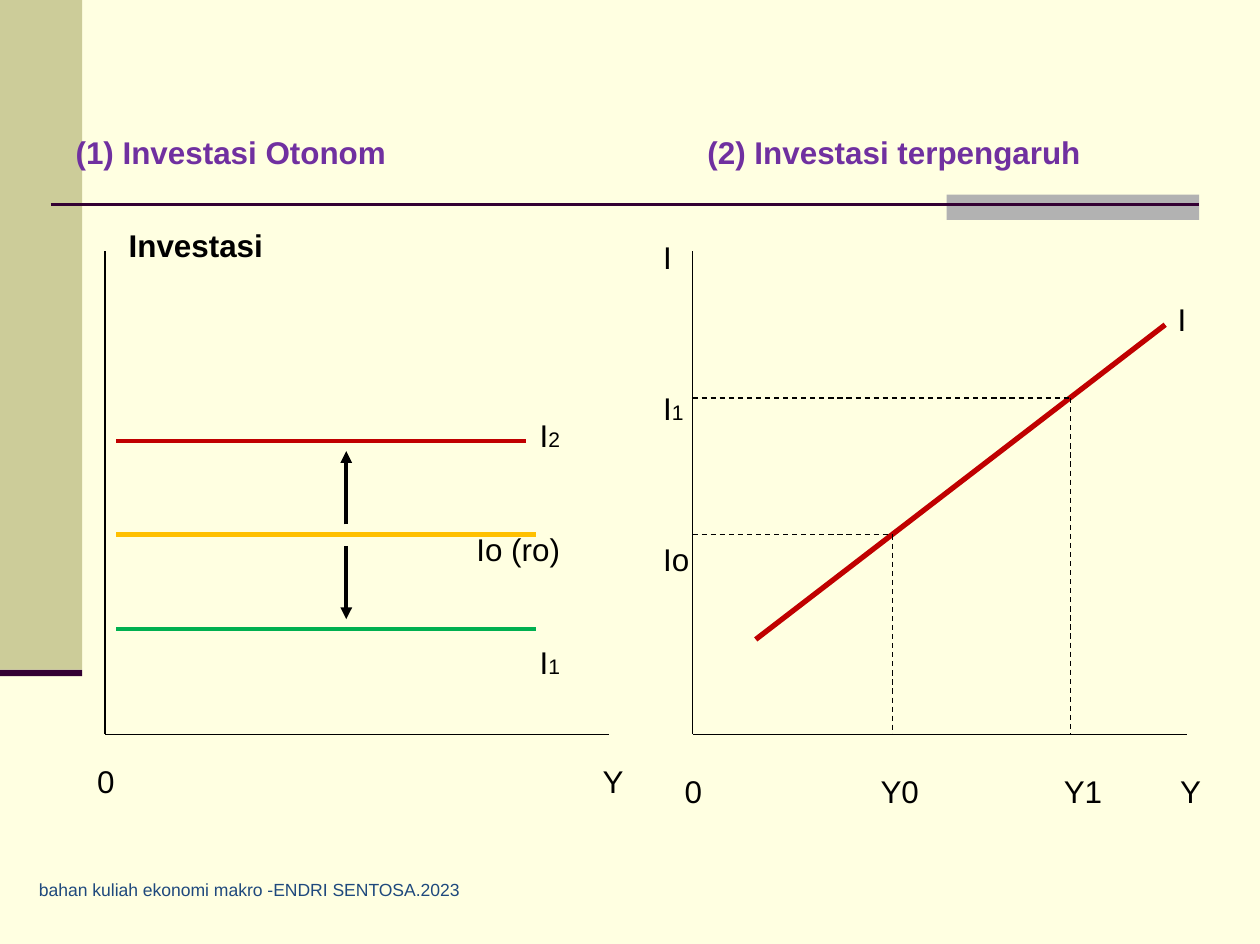
from lxml import etree
from pptx import Presentation
from pptx.dml.color import RGBColor
from pptx.enum import dml, shapes, text
from pptx.oxml import ns
from pptx.util import Inches, Pt

COLORS = {
    "cream": "FFFFE1", "olive": "CCCC99", "gray": "B2B2B2", "plum": "330033",
    "black": "000000", "amber": "FFC000", "red": "C00000", "green": "00B050",
    "purple": "7030A0", "navy": "1F497D",
}


def rgb(name):
    return RGBColor.from_string(COLORS[name])


class Canvas:
    font = "Arial"
    size = 17.9
    small = 12

    def __init__(self, slide):
        self.slide = slide
        background = slide.background.fill
        background.solid()
        background.fore_color.rgb = rgb("cream")

    def block(self, left, top, width, height, color):
        block = self.slide.shapes.add_shape(
            shapes.MSO_SHAPE.RECTANGLE, *map(Inches, (left, top, width, height)))
        block.shadow.inherit = False
        block.fill.solid()
        block.fill.fore_color.rgb = rgb(color)
        block.line.fill.background()

    def line(self, start, end, color="black", width=0.75, dashed=False, arrow=False):
        line = self.slide.shapes.add_connector(
            shapes.MSO_CONNECTOR.STRAIGHT, *map(Inches, (*start, *end)))
        line.line.color.rgb = rgb(color)
        line.line.width = Pt(width)
        if dashed:
            line.line.dash_style = dml.MSO_LINE.DASH
        if arrow:
            etree.SubElement(line.line._get_or_add_ln(), ns.qn("a:tailEnd"), type="triangle")
        etree.SubElement(line._element.spPr, ns.qn("a:effectLst"))

    def label(self, words, left, top, width=0.6, subscript="", size=size,
              color="black", bold=False, right=False):
        """Write one line of text, with an optional smaller ending."""
        box = self.slide.shapes.add_textbox(*map(Inches, (left, top, width, 0.4)))
        frame = box.text_frame
        frame.word_wrap = True
        frame.vertical_anchor = text.MSO_ANCHOR.MIDDLE
        line = frame.paragraphs[0]
        line.alignment = text.PP_ALIGN.RIGHT if right else text.PP_ALIGN.LEFT
        line.font.name, line.font.size, line.font.bold = self.font, Pt(size), bold
        line.font.color.rgb = rgb(color)
        line.add_run().text = words
        if subscript:
            ending = line.add_run()
            ending.text = subscript
            ending.font.size = Pt(self.small)

    def axes(self, origin_x, end_x, top=1.99, base=5.81):
        self.line((origin_x, top), (origin_x, base))
        self.line((origin_x, base), (end_x, base))


def draw_frame(canvas):
    canvas.block(0, 0, 0.65, 5.3, "olive")
    canvas.block(7.49, 1.54, 2, 0.2, "gray")
    canvas.line((0.4, 1.62), (9.49, 1.62), "plum", 1.5)
    canvas.block(0, 5.3, 0.65, 0.05, "plum")
    for heading, left in (("(1) Investasi Otonom", 0.5), ("(2) Investasi terpengaruh", 5.5)):
        canvas.label(heading, left, 1, 3.47, color="purple", bold=True)
    canvas.label("bahan kuliah ekonomi makro -ENDRI SENTOSA.2023", 0.21, 6.84, 4.14,
                 size=10, color="navy")


def draw_autonomous(canvas):
    canvas.axes(0.83, 4.82)
    for y, end_x, color, width in ((4.23, 4.24, "amber", 3), (3.49, 4.16, "red", 2.25),
                                   (4.98, 4.24, "green", 2.25)):
        canvas.line((0.92, y), (end_x, y), color, width)
    for start_y, end_y in ((4.15, 3.57), (4.32, 4.9)):
        canvas.line((2.74, start_y), (2.74, end_y), width=2.25, arrow=True)
    canvas.label("Investasi", 0.92, 1.74, 1.5, bold=True)
    for words, subscript, top in (("I", "2", 3.24), ("Io (ro)", "", 4.14), ("I", "1", 5.04)):
        canvas.label(words, 3.53, top, 1, subscript, right=True)
    for words, left in (("0", 0.67), ("Y", 4.67)):
        canvas.label(words, left, 5.98)


def draw_induced(canvas):
    axis_x, base = 5.48, 5.81
    canvas.axes(axis_x, 9.39)
    canvas.line((5.98, 5.06), (9.22, 2.57), "red", 3)
    for income, investment in ((7.06, 4.23), (8.47, 3.15)):
        canvas.line((axis_x, investment), (income, investment), dashed=True)
        canvas.line((income, investment), (income, base), dashed=True)
    canvas.label("I", 9.22, 2.32)
    for words, left in (("0", 5.32), ("Y0", 6.87), ("Y1", 8.32), ("Y", 9.24)):
        canvas.label(words, left, 6.06)
    for words, subscript, top in (("I", "", 1.83), ("I", "1", 3.03), ("Io", "", 4.22)):
        canvas.label(words, 5.15, top, subscript=subscript)


def main():
    deck = Presentation()
    deck.slide_width, deck.slide_height = Inches(9.97), Inches(7.47)
    canvas = Canvas(deck.slides.add_slide(deck.slide_layouts[6]))
    draw_frame(canvas)
    draw_autonomous(canvas)
    draw_induced(canvas)
    deck.save("out.pptx")


if __name__ == "__main__":
    main()
